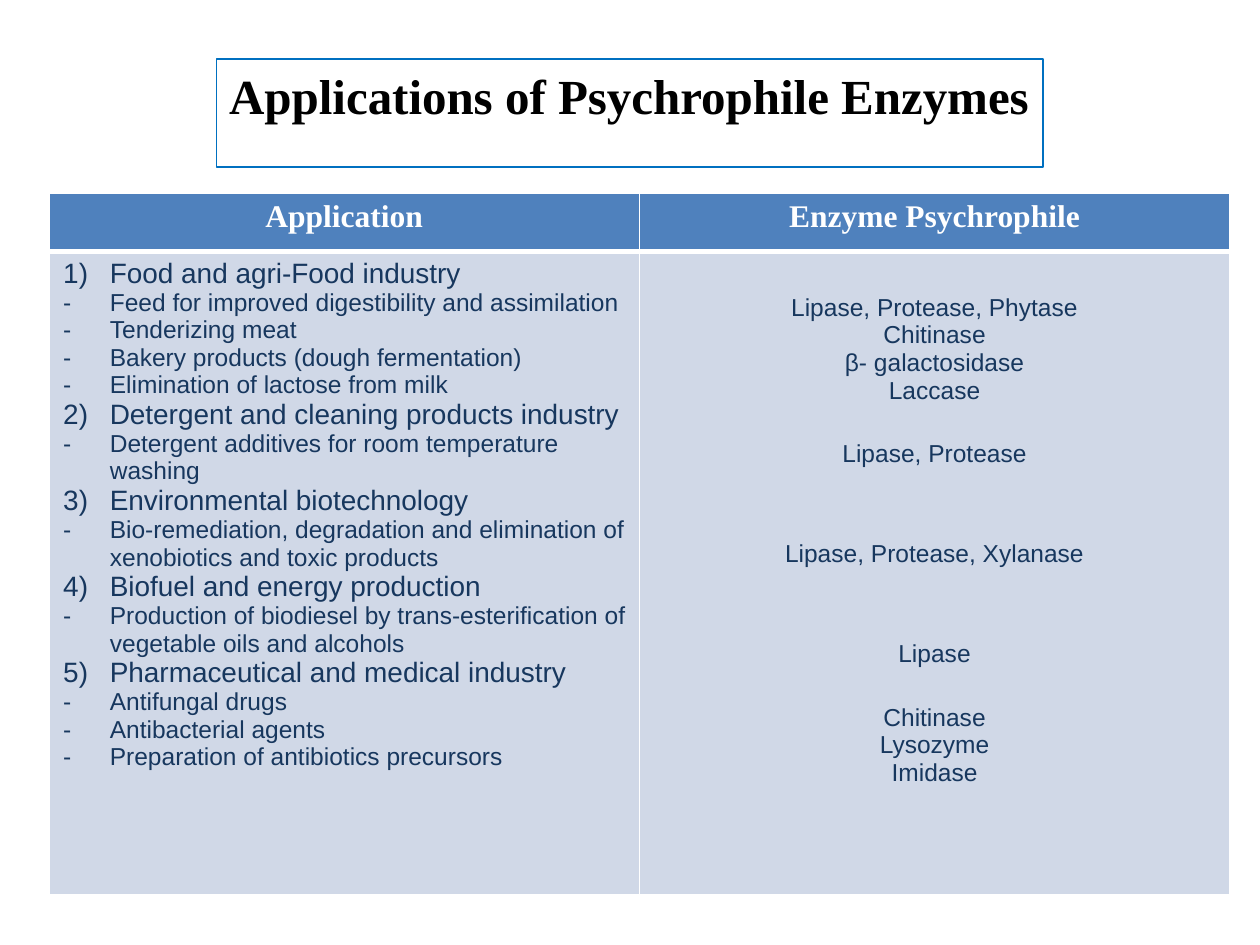
from lxml.etree import SubElement
from pptx import Presentation
from pptx.dml.color import RGBColor
from pptx.enum.shapes import MSO_SHAPE as Shape
from pptx.enum.text import MSO_ANCHOR as Anchor, PP_ALIGN as Align
from pptx.oxml.ns import qn
from pptx.util import Cm, Pt

COLORS = {
    "title": "000000",
    "title_line": "0070C0",
    "header": "4F81BD",
    "body": "D0D8E7",
    "ink": "17375E",
    "white": "FFFFFF",
}
SERIF, SANS = "Times New Roman", "Arial"
BLANK_LINE = 0.73  # height of one skipped line, in cm
THIN, THICK = 0.96, 3

INDUSTRIES = [
    ("Food and agri-Food industry", [
        "Feed for improved digestibility and assimilation",
        "Tenderizing meat",
        "Bakery products (dough fermentation)",
        "Elimination of lactose from milk"]),
    ("Detergent and cleaning products industry", [
        "Detergent additives for room temperature washing"]),
    ("Environmental biotechnology", [
        "Bio-remediation, degradation and elimination of "
        "xenobiotics and toxic products"]),
    ("Biofuel and energy production", [
        "Production of biodiesel by trans-esterification of "
        "vegetable oils and alcohols"]),
    ("Pharmaceutical and medical industry", [
        "Antifungal drugs",
        "Antibacterial agents",
        "Preparation of antibiotics precursors"]),
]

# Lines skipped before each group, and its enzymes
ENZYMES = [
    (0, ["Lipase, Protease, Phytase", "Chitinase", "β- galactosidase", "Laccase"]),
    (1, ["Lipase, Protease"]),
    (2, ["Lipase, Protease, Xylanase"]),
    (2, ["Lipase"]),
    (1, ["Chitinase", "Lysozyme", "Imidase"]),
]


def rgb(name):
    return RGBColor.from_string(COLORS[name])


def add_bullet(paragraph, number=None):
    """Hang the paragraph behind a number such as 1), or behind a dash."""
    props = paragraph._p.get_or_add_pPr()
    props.set("marL", str(Cm(0.97)))
    props.set("indent", str(Cm(-0.94)))
    bullet_color = SubElement(props, qn("a:buClr"))
    SubElement(bullet_color, qn("a:srgbClr"), val=COLORS["ink"])
    SubElement(props, qn("a:buFont"), typeface=SANS)
    if number:
        SubElement(props, qn("a:buAutoNum"), type="arabicParenR", startAt=str(number))
    else:
        SubElement(props, qn("a:buChar"), char="-")


def write(frame, text, size=14, font=SANS, color="ink", bold=False,
          align=Align.LEFT, gap=0, bullet=False, number=None):
    """Put text in the first paragraph if it is free, else in a new one."""
    first = frame.paragraphs[0]
    paragraph = frame.add_paragraph() if first.runs else first
    paragraph.alignment = align
    if gap:
        paragraph.space_before = Cm(gap)
    if bullet:
        add_bullet(paragraph, number)
    run = paragraph.add_run()
    run.text = text
    run.font.size = Pt(size)
    run.font.name = font
    run.font.bold = bold
    run.font.color.rgb = rgb(color)


def style_cell(cell, fill, top, bottom):
    props = cell._tc.get_or_add_tcPr()
    for side, width in (("L", THIN), ("R", THIN), ("T", top), ("B", bottom)):
        border = SubElement(props, qn(f"a:ln{side}"), w=str(Pt(width)))
        border_fill = SubElement(border, qn("a:solidFill"))
        SubElement(border_fill, qn("a:srgbClr"), val=COLORS["white"])
    cell.fill.solid()
    cell.fill.fore_color.rgb = rgb(fill)


def add_title(slide, text):
    title = slide.shapes.add_shape(Shape.RECTANGLE, Cm(4.37), Cm(1.19), Cm(16.66), Cm(2.18))
    title.shadow.inherit = False
    title.fill.background()
    title.line.color.rgb = rgb("title_line")
    title.line.width = Pt(0.75)
    frame = title.text_frame
    frame.word_wrap = True
    frame.vertical_anchor = Anchor.TOP
    write(frame, text, size=28, font=SERIF, color="title", bold=True)


def add_enzyme_table(slide):
    table = slide.shapes.add_table(2, 2, Cm(0.99), Cm(3.89), Cm(23.8), Cm(14.15)).table
    table.rows[0].height = Cm(1.18)
    table.rows[1].height = Cm(12.97)

    # Header row
    for column, heading in enumerate(("Application", "Enzyme Psychrophile")):
        header = table.cell(0, column)
        style_cell(header, "header", THIN, THICK)
        style_cell(table.cell(1, column), "body", THICK, THIN)
        write(header.text_frame, heading, size=18, font=SERIF, color="white",
              bold=True, align=Align.CENTER)

    # Applications by industry
    applications = table.cell(1, 0).text_frame
    for number, (industry, uses) in enumerate(INDUSTRIES, start=1):
        write(applications, industry, size=16, bullet=True, number=number)
        for use in uses:
            write(applications, use, bullet=True)

    # Enzymes, level with their applications
    enzyme_cell = table.cell(1, 1)
    enzyme_cell.margin_top = Cm(0.13 + BLANK_LINE)
    for skipped, enzymes in ENZYMES:
        for position, enzyme in enumerate(enzymes):
            gap = 0 if position else skipped * BLANK_LINE
            write(enzyme_cell.text_frame, enzyme, align=Align.CENTER, gap=gap)


def main():
    deck = Presentation()
    deck.slide_width, deck.slide_height = Cm(25.4), Cm(19.05)
    slide = deck.slides.add_slide(deck.slide_layouts[6])
    add_title(slide, "Applications of Psychrophile Enzymes")
    add_enzyme_table(slide)
    deck.save("out.pptx")


if __name__ == "__main__":
    main()
